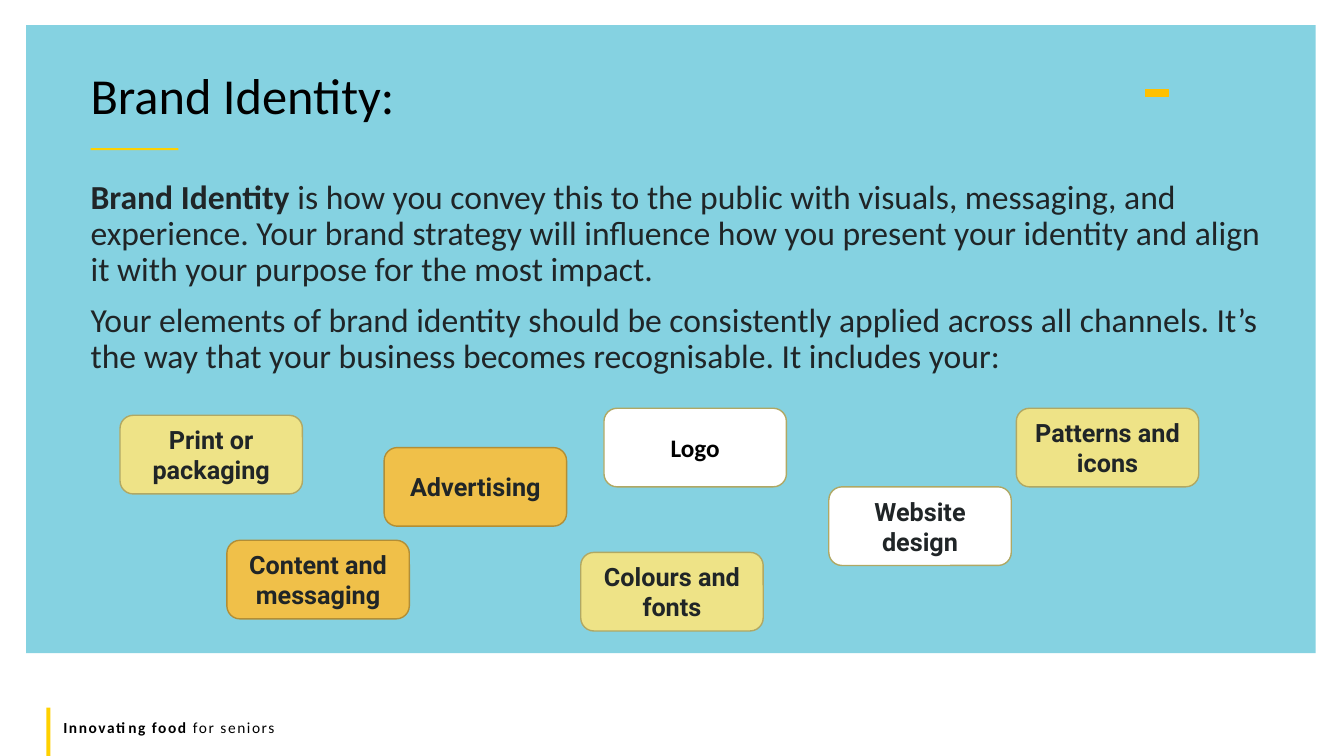
"""Build the brand identity slide with its scattered element cards."""
from dataclasses import dataclass

from pptx import Presentation
from pptx.dml.color import RGBColor
from pptx.enum.shapes import MSO_SHAPE
from pptx.enum.text import MSO_ANCHOR, PP_ALIGN
from pptx.util import Inches, Pt

RECT = MSO_SHAPE.RECTANGLE
ROUNDED = MSO_SHAPE.ROUNDED_RECTANGLE
MIDDLE = MSO_ANCHOR.MIDDLE
CENTER = PP_ALIGN.CENTER

COLORS = {
    "panel": "85D2E1",
    "accent": "FFD100",
    "dash": "FFC000",
    "white": "FFFFFF",
    "lemon": "EEE387",
    "lemon_edge": "B0A864",
    "amber": "F0C049",
    "amber_edge": "B28E36",
    "ink": "202527",
    "black": "000000",
}
CARD_WIDTH, CARD_HEIGHT = 1.81, 0.78
FOOTER_TRACKING = "110"

TITLE = {"name": "Calibri", "size": Pt(36), "bold": False}
BODY = {"name": "Calibri", "size": Pt(24), "bold": False}
FOOTER = {"name": "Calibri", "size": Pt(11), "bold": False}
CARD = {"name": "Roboto", "size": Pt(18), "bold": True}
LOGO_CARD = CARD | {"name": "Calibri"}


@dataclass
class Block:
    left: float
    top: float
    width: float
    height: float
    fill: str
    edge: str | None = None


@dataclass
class Card:
    label: str
    left: float
    top: float
    fill: str
    edge: str = "lemon_edge"
    format: dict | None = None
    ink: str = "ink"


@dataclass
class Passage:
    left: float
    top: float
    width: float
    height: float
    paragraphs: list[tuple[str, str]]
    format: dict
    ink: str
    line_spacing: float = 1.0
    tracking: str | None = None


BLOCKS = [
    Block(0.26, 0.25, 12.79, 6.23, "panel"),
    Block(0.9, 1.47, 0.87, 0.02, "accent"),
    Block(0.46, 7.02, 0.04, 0.48, "accent"),
    Block(11.36, 0.89, 0.23, 0.07, "dash", "dash"),
]
PASSAGES = [
    Passage(0.53, 7.07, 12, 0.29, [("Innovating food", " for seniors")],
            FOOTER, "black", tracking=FOOTER_TRACKING),
    Passage(0.8, 1.74, 11.82, 4.41, [
        ("Brand Identity",
         " is how you convey this to the public with visuals, messaging, and "
         "experience. Your brand strategy will influence how you present your "
         "identity and align it with your purpose for the most impact."),
        ("",
         "Your elements of brand identity should be consistently applied across "
         "all channels. It’s the way that your business becomes recognisable. "
         "It includes your:"),
    ], BODY, "ink", 0.9),
    Passage(0.8, 0.7, 11.82, 0.64, [("", "Brand Identity:")], TITLE, "black", 0.8),
]
CARDS = [
    Card("Print or packaging", 1.19, 4.12, "lemon"),
    Card("Advertising", 3.81, 4.44, "amber", "amber_edge"),
    Card("Content and messaging", 2.25, 5.36, "amber", "amber_edge"),
    Card("Patterns and icons", 10.08, 4.05, "lemon"),
    Card("Website design", 8.22, 4.83, "white"),
    Card("Colours and fonts", 5.76, 5.48, "lemon"),
    Card("Logo", 5.99, 4.05, "white", format=LOGO_CARD, ink="black"),
]


def color(key: str) -> RGBColor:
    return RGBColor.from_string(COLORS[key])


def add_run(paragraph, text: str, font_format: dict, ink: str):
    run = paragraph.add_run()
    run.text = text
    for attribute, value in font_format.items():
        setattr(run.font, attribute, value)
    run.font.color.rgb = color(ink)
    return run


def draw_block(slide, block: Block, outline=RECT):
    shape = slide.shapes.add_shape(
        outline, Inches(block.left), Inches(block.top),
        Inches(block.width), Inches(block.height))
    shape.shadow.inherit = False
    shape.fill.solid()
    shape.fill.fore_color.rgb = color(block.fill)
    if block.edge:
        shape.line.color.rgb = color(block.edge)
        shape.line.width = Pt(1)
    else:
        shape.line.fill.background()
    return shape


def draw_card(slide, card: Card) -> None:
    body = Block(card.left, card.top, CARD_WIDTH, CARD_HEIGHT, card.fill, card.edge)
    frame = draw_block(slide, body, ROUNDED).text_frame
    frame.word_wrap = True
    frame.vertical_anchor = MIDDLE
    paragraph = frame.paragraphs[0]
    paragraph.alignment = CENTER
    add_run(paragraph, card.label, card.format or CARD, card.ink)


def draw_passage(slide, passage: Passage) -> None:
    frame = slide.shapes.add_textbox(
        Inches(passage.left), Inches(passage.top),
        Inches(passage.width), Inches(passage.height)).text_frame
    frame.word_wrap = True
    for index, (lead, rest) in enumerate(passage.paragraphs):
        paragraph = frame.add_paragraph() if index else frame.paragraphs[0]
        paragraph.line_spacing = passage.line_spacing
        if index:
            paragraph.space_before = Pt(10)
        for text, bold in ((lead, True), (rest, False)):
            if text:
                run = add_run(paragraph, text, passage.format | {"bold": bold}, passage.ink)
                if passage.tracking:
                    run._r.get_or_add_rPr().set("spc", passage.tracking)


def main() -> None:
    deck = Presentation()
    deck.slide_width, deck.slide_height = Inches(13.33), Inches(7.5)
    slide = deck.slides.add_slide(deck.slide_layouts[6])
    for block in BLOCKS:
        draw_block(slide, block)
    for passage in PASSAGES:
        draw_passage(slide, passage)
    for card in CARDS:
        draw_card(slide, card)
    deck.save("out.pptx")


if __name__ == "__main__":
    main()
